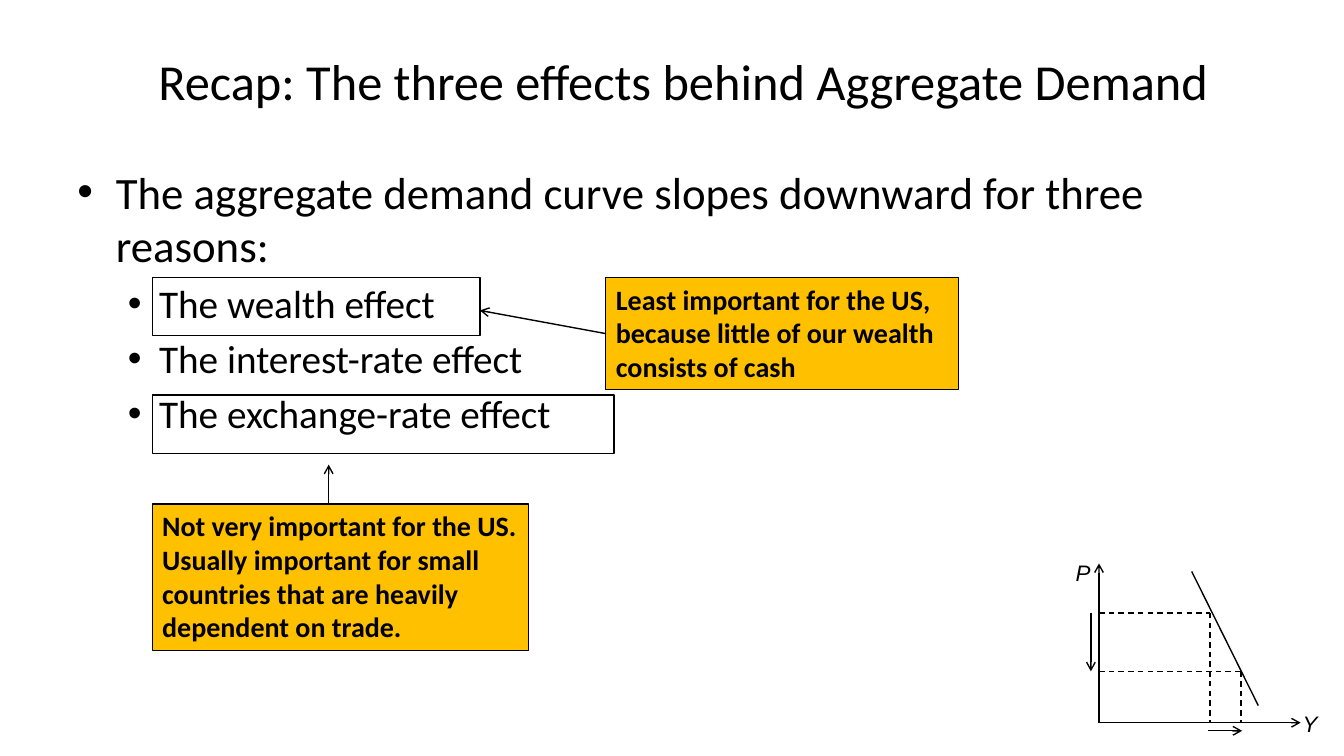
from pptx import Presentation
from pptx.dml.color import RGBColor
from pptx.enum.dml import MSO_LINE
from pptx.enum.shapes import MSO_CONNECTOR, MSO_SHAPE
from pptx.enum.text import MSO_ANCHOR, PP_ALIGN
from pptx.oxml.ns import qn
from pptx.util import Inches, Pt
from lxml import etree

DASH = MSO_LINE.DASH
STRAIGHT = MSO_CONNECTOR.STRAIGHT
RECT = MSO_SHAPE.RECTANGLE
TOP, MIDDLE = MSO_ANCHOR.TOP, MSO_ANCHOR.MIDDLE
LEFT, CENTER = PP_ALIGN.LEFT, PP_ALIGN.CENTER

COLORS = {"ink": "000000", "note": "FFC000"}
FORMATS = {
    "title": {"name": "Calibri", "size": Pt(36)},
    "point": {"name": "Calibri", "size": Pt(32)},
    "effect": {"name": "Calibri", "size": Pt(28)},
    "note": {"name": "Calibri", "size": Pt(20), "bold": True},
    "axis": {"name": "Arial", "size": Pt(16), "italic": True},
}


def color(key):
    return RGBColor.from_string(COLORS[key])


class Board:
    def __init__(self, deck):
        self.slide = deck.slides.add_slide(deck.slide_layouts[6])
        self.shapes = self.slide.shapes

    def fill_para(self, para, text, style, align=LEFT):
        para.alignment = align
        run = para.add_run()
        run.text = text
        run.font.color.rgb = color("ink")
        for key, value in FORMATS[style].items():
            setattr(run.font, key, value)

    def frame(self, box):
        frame = self.shapes.add_textbox(*map(Inches, box)).text_frame
        frame.word_wrap = True
        return frame

    def text(self, box, text, style, align=LEFT, anchor=TOP):
        frame = self.frame(box)
        frame.vertical_anchor = anchor
        self.fill_para(frame.paragraphs[0], text, style, align)
        return frame

    def bullets(self, box, items):
        frame = self.frame(box)
        for i, (level, text, style) in enumerate(items):
            para = frame.add_paragraph() if i else frame.paragraphs[0]
            para.level = level
            para.space_before = Pt(FORMATS[style]["size"].pt * 0.2)
            self.fill_para(para, text, style)
            margin, hang = ((0.38, 0.38), (0.81, 0.31))[level]
            props = para._p.get_or_add_pPr()
            props.set("marL", str(Inches(margin)))
            props.set("indent", str(-Inches(hang)))
            etree.SubElement(props, qn("a:buFont"), typeface="Arial")
            etree.SubElement(props, qn("a:buChar"), char="•")

    def rect(self, box, weight=1.0):
        shape = self.shapes.add_shape(RECT, *map(Inches, box))
        shape.shadow.inherit = False
        shape.fill.background()
        shape.line.color.rgb = color("ink")
        shape.line.width = Pt(weight)
        return shape

    def note(self, box, text):
        shape = self.rect(box, 0.75)
        shape.fill.solid()
        shape.fill.fore_color.rgb = color("note")
        frame = shape.text_frame
        frame.word_wrap = True
        frame.vertical_anchor = TOP
        self.fill_para(frame.paragraphs[0], text, "note")

    def line(self, start, end, arrow=False, dash=None):
        link = self.shapes.add_connector(STRAIGHT, *map(Inches, start + end))
        link.line.color.rgb = color("ink")
        link.line.width = Pt(1)
        if dash:
            link.line.dash_style = dash
        props = link._element.spPr
        if arrow:
            etree.SubElement(props.get_or_add_ln(), qn("a:tailEnd"), type="arrow")
        etree.SubElement(props, qn("a:effectLst"))


def main():
    deck = Presentation()
    deck.slide_width, deck.slide_height = Inches(13.33), Inches(7.5)
    board = Board(deck)

    # Title and list
    title = board.text((0.67, 0.17, 12.22, 1.33),
                       "Recap: The three effects behind Aggregate Demand",
                       "title", CENTER, MIDDLE)
    title.paragraphs[0].line_spacing = 0.9
    board.bullets((0.67, 1.58, 12.22, 5.68), [
        (0, "The aggregate demand curve slopes downward for three reasons:", "point"),
        (1, "The wealth effect", "effect"),
        (1, "The interest-rate effect", "effect"),
        (1, "The exchange-rate effect", "effect"),
    ])

    # Graph axes and demand curve
    left, base = 10.9, 7.17
    board.line((left, base), (12.9, base), arrow=True)
    board.line((left, base), (left, 5.59), arrow=True)
    board.line((11.82, 5.67), (12.48, 7))
    board.text((12.82, 7, 0.42, 0.37), "Y", "axis")
    board.text((10.57, 5.5, 0.42, 0.37), "P", "axis")

    # Price and output levels on the curve
    high, low = 6.08, 6.66
    for output, price in ((12, high), (12.31, low)):
        board.line((left, price), (output, price), dash=DASH)
        board.line((output, price), (output, base), dash=DASH)

    # Fall in price, rise in output
    board.line((10.82, high), (10.82, low), arrow=True)
    board.line((11.98, 7.25), (12.32, 7.25), arrow=True)

    # Wealth effect remark
    board.note((6.01, 2.75, 3.5, 1.11),
               "Least important for the US, because little of our wealth consists of cash")
    board.line((6.01, 3.31), (4.76, 3.08), arrow=True)
    board.rect((1.51, 2.75, 3.25, 0.58))

    # Exchange-rate effect remark
    board.note((1.51, 5, 3.73, 1.45),
               "Not very important for the US. Usually important for small "
               "countries that are heavily dependent on trade.")
    board.line((3.26, 5), (3.26, 4.61), arrow=True)
    board.rect((1.51, 3.92, 4.58, 0.58))

    deck.save("out.pptx")


if __name__ == "__main__":
    main()
